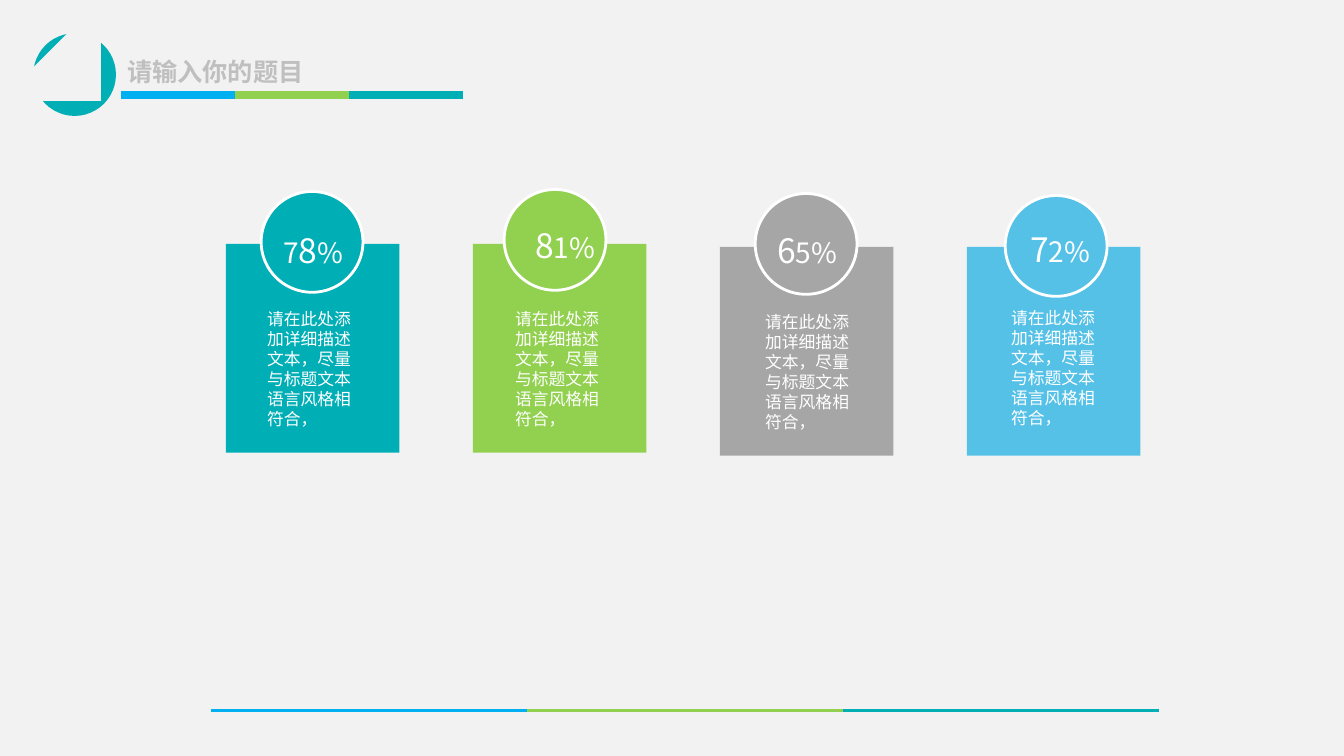
from pptx import Presentation
from pptx.dml.color import RGBColor
from pptx.enum import shapes, text
from pptx.oxml.ns import qn
from pptx.util import Inches, Pt

FONT = "Noto Sans CJK SC"
WHITE = RGBColor(0xFF, 0xFF, 0xFF)
BACKGROUND = RGBColor(0xF2, 0xF2, 0xF2)
TITLE_GREY = RGBColor(0xBF, 0xBF, 0xBF)
TEAL = RGBColor(0x00, 0xAE, 0xB6)
GREEN = RGBColor(0x92, 0xD0, 0x50)
GREY = RGBColor(0xA6, 0xA6, 0xA6)
SKY = RGBColor(0x55, 0xC1, 0xE7)
BLUE = RGBColor(0x00, 0xB0, 0xF0)

TITLE = "请输入你的题目"
DESCRIPTION = "请在此处添加详细描述文本，尽量与标题文本语言风格相符合，"
# colour, (text, size) runs, card top, then left and top of circle, number, description
CARDS = [
    (TEAL, [("7", 20), ("8", 24), ("%", 20)], 2.42, (2.59, 1.9), (2.71, 2.2), (2.55, 3.01)),
    (GREEN, [("8", 24), ("1%", 20)], 2.42, (5, 1.88), (5.21, 2.15), (5.01, 3.01)),
    (GREY, [("6", 24), ("5%", 20)], 2.45, (7.49, 1.92), (7.61, 2.2), (7.49, 3.04)),
    (SKY, [("7", 24), ("2%", 20)], 2.45, (9.97, 1.94), (10.12, 2.19), (9.93, 3)),
]
FIRST_CARD, CARD_STEP = 2.24, 2.45
CARD_SIZE, CIRCLE_SIZE = (1.72, 2.07), (1.01, 1)
NUMBER_SIZE, DESCRIPTION_SIZE = (0.94, 0.5), (1.09, 1.31)
# left, y, segment length, line width
STRIPES = [(2.09, 7.05, 3.136, 2.25), (1.2, 0.94, 1.13, 6)]

TOOTH_START = (0.58, 0.46)
TOOTH_CURVES = [
    ((0.55, 0.46), (0.53, 0.47), (0.51, 0.49)),
    ((0.43, 0.57), (0.51, 0.79), (0.54, 0.9)),
    ((0.57, 0.98), (0.58, 1.1), (0.64, 1.1)),
    ((0.7, 1.1), (0.71, 0.9), (0.75, 0.9)),
    ((0.78, 0.9), (0.8, 1.04), (0.84, 1.04)),
    ((0.88, 1.05), (0.95, 0.92), (0.99, 0.84)),
    ((1.03, 0.75), (1.05, 0.62), (1, 0.54)),
    ((0.95, 0.45), (0.82, 0.47), (0.75, 0.5)),
    ((0.77, 0.52), (0.79, 0.57), (0.87, 0.61)),
    ((0.86, 0.61), (0.8, 0.61), (0.75, 0.55)),
    ((0.72, 0.51), (0.64, 0.45), (0.58, 0.46)),
]

presentation = Presentation()
presentation.slide_width, presentation.slide_height = Inches(13.33), Inches(7.5)
slide = presentation.slides.add_slide(presentation.slide_layouts[5])
slide.background.fill.solid()
slide.background.fill.fore_color.rgb = BACKGROUND


def box(position, size):
    return [Inches(value) for value in (*position, *size)]


def paint(shape, color, outline=None):
    shape.shadow.inherit = False
    shape.fill.solid()
    shape.fill.fore_color.rgb = color
    if outline is None:
        shape.line.fill.background()
    else:
        shape.line.color.rgb = outline
        shape.line.width = Pt(2)


def write(shape, runs, color=WHITE, bold=False, align=text.PP_ALIGN.LEFT, spacing=14.4, wrap=True):
    """Fill the shape with one paragraph of (text, size) runs."""
    frame = shape.text_frame
    frame.word_wrap = wrap
    frame.auto_size = text.MSO_AUTO_SIZE.NONE
    frame.vertical_anchor = text.MSO_ANCHOR.TOP
    paragraph = frame.paragraphs[0]
    paragraph.alignment = align
    paragraph.line_spacing = Pt(spacing)
    for words, size in runs:
        run = paragraph.add_run()
        run.text = words
        run.font.name, run.font.size, run.font.bold = FONT, Pt(size), bold
        run.font.color.rgb = color
        east_asian = run.font._element.makeelement(qn("a:ea"), {"typeface": FONT})
        run.font._element.find(qn("a:latin")).addnext(east_asian)


def add_stripe(left, y, length, width):
    for index, color in enumerate((BLUE, GREEN, TEAL)):
        start = left + index * length
        line = slide.shapes.add_connector(
            shapes.MSO_CONNECTOR.STRAIGHT,
            Inches(start), Inches(y), Inches(start + length), Inches(y))
        line.line.color.rgb = color
        line.line.width = Pt(width)
        properties = line._element.spPr
        properties.append(properties.makeelement(qn("a:effectLst"), {}))


def curve_points(start, curves, steps=10):
    """Sample a chain of cubic curves."""
    points = []
    for first, second, end in curves:
        for step in range(1, steps + 1):
            t = step / steps
            weights = ((1 - t) ** 3, 3 * t * (1 - t) ** 2, 3 * t * t * (1 - t), t ** 3)
            points.append(tuple(
                sum(weight * point[axis] for weight, point in zip(weights, (start, first, second, end)))
                for axis in (0, 1)))
        start = end
    return points


def add_tooth_badge():
    disc = slide.shapes.add_shape(shapes.MSO_SHAPE.OVAL, *box((0.33, 0.33), (0.82, 0.82)))
    paint(disc, TEAL)
    builder = slide.shapes.build_freeform(*TOOTH_START, scale=Inches(1))
    builder.add_line_segments(curve_points(TOOTH_START, TOOTH_CURVES), close=True)
    paint(builder.convert_to_shape(), BACKGROUND)


def add_card(index, color, number, top, circle_at, number_at, description_at):
    left = FIRST_CARD + index * CARD_STEP
    card = slide.shapes.add_shape(shapes.MSO_SHAPE.RECTANGLE, *box((left, top), CARD_SIZE))
    paint(card, color)
    circle = slide.shapes.add_shape(shapes.MSO_SHAPE.OVAL, *box(circle_at, CIRCLE_SIZE))
    paint(circle, color, outline=WHITE)
    write(slide.shapes.add_textbox(*box(number_at, NUMBER_SIZE)), number, spacing=31)
    write(slide.shapes.add_textbox(*box(description_at, DESCRIPTION_SIZE)), [(DESCRIPTION, 12)])


for stripe in STRIPES:
    add_stripe(*stripe)
add_tooth_badge()
title = slide.shapes.title
title.left, title.top, title.width, title.height = box((1.15, 0.49), (1.97, 0.4))
write(title, [(TITLE, 18)], color=TITLE_GREY, bold=True,
      align=text.PP_ALIGN.CENTER, spacing=23, wrap=False)
for index, card in enumerate(CARDS):
    add_card(index, *card)

presentation.save("out.pptx")
